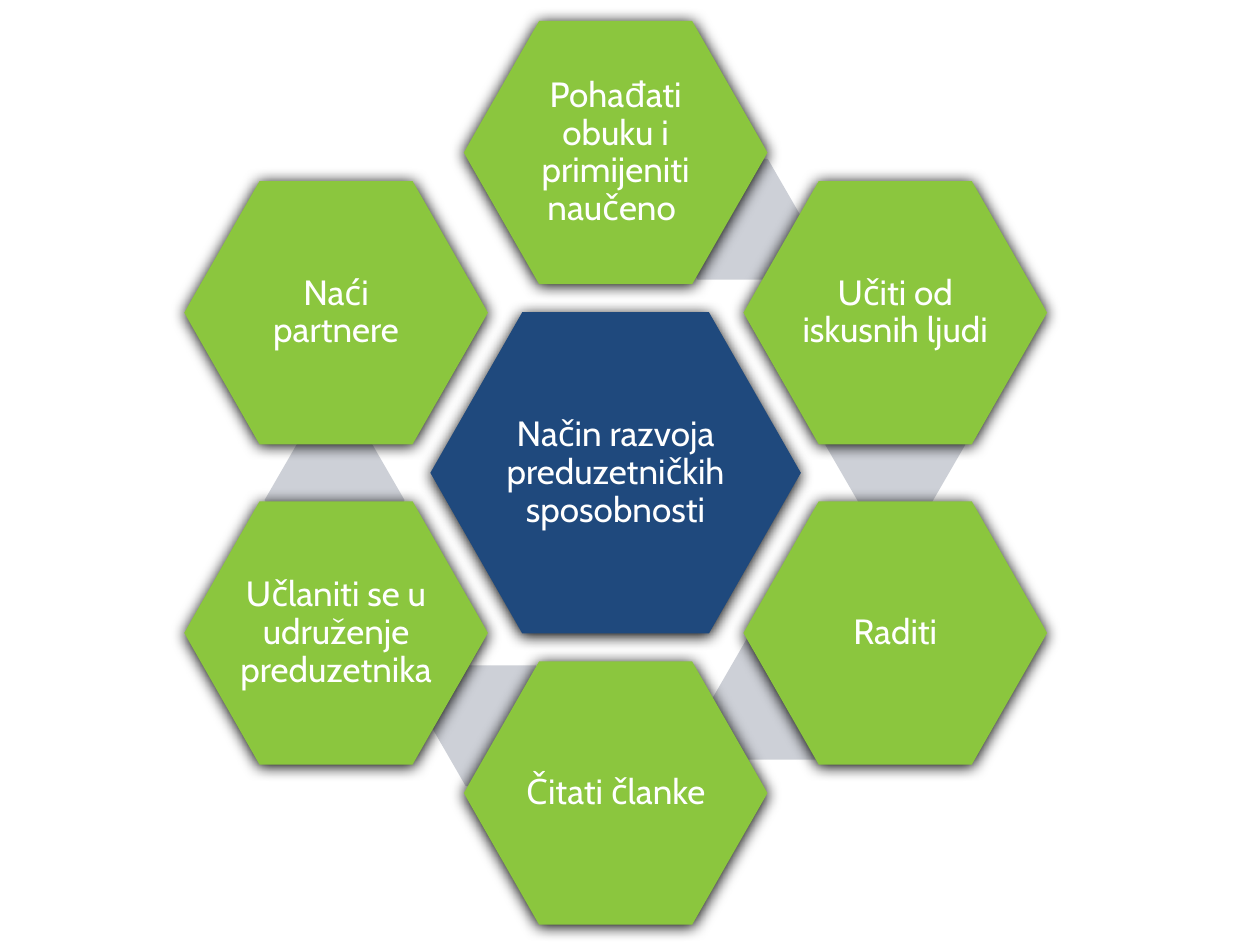
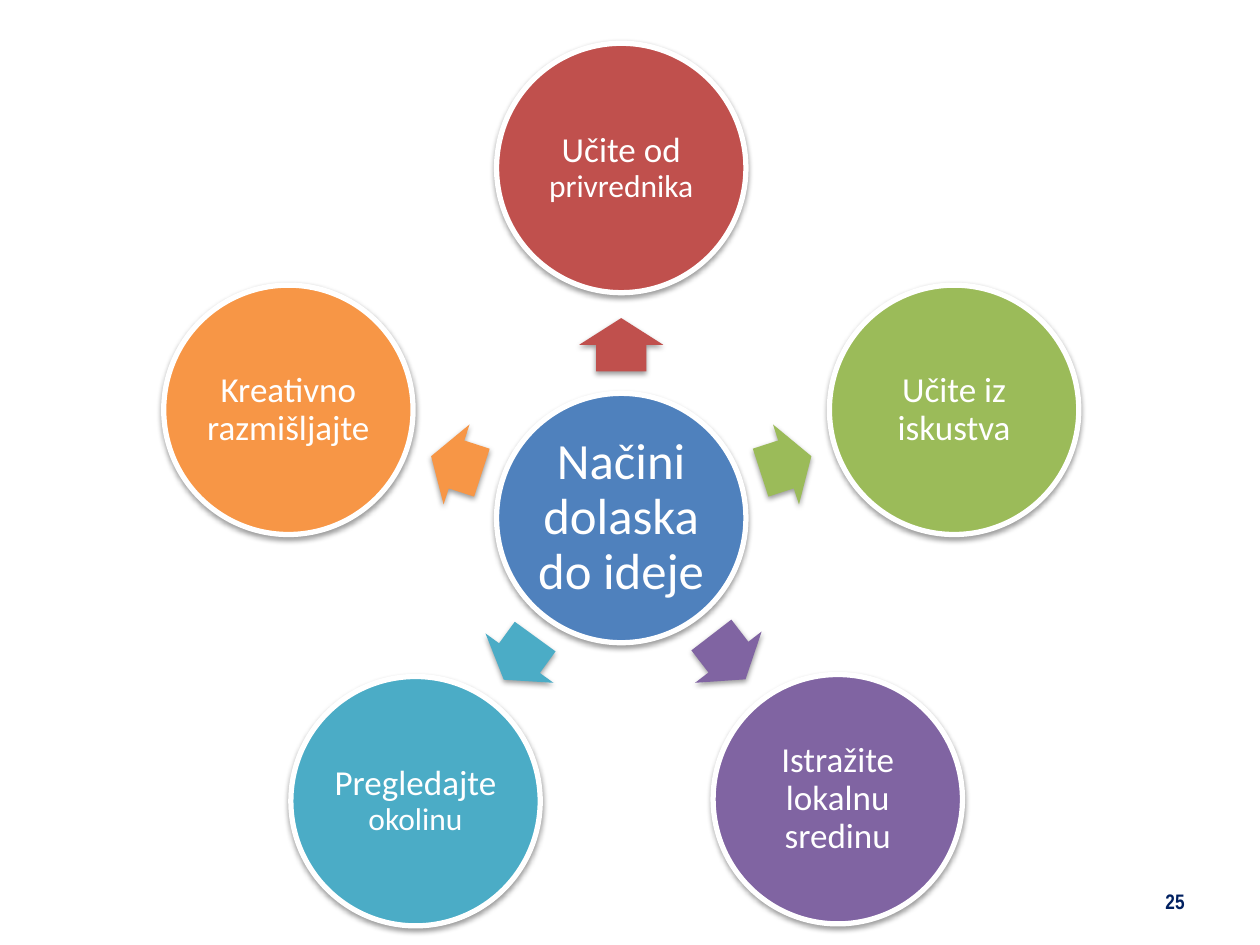
from math import cos, radians, sin

from lxml.etree import SubElement
from pptx import Presentation
from pptx.dml.color import RGBColor
from pptx.enum.shapes import MSO_SHAPE
from pptx.enum.text import MSO_ANCHOR, PP_ALIGN
from pptx.oxml.ns import qn
from pptx.util import Pt

WHITE = "FFFFFF"
NAVY = "1F497D"
GREEN = "8BC63E"
PALE_GREY = "CDD0D7"
BLUE = "4F81BD"
PAGE_NUMBER_COLOUR = "002060"

# Blur, distance and opacity in per cent
STRONG_SHADOW = (8.5, 1, 100)
SOFT_SHADOW = (3.1, 1.6, 38)

HEXAGON_CENTRE = (351.8, 270.2)
HEXAGON_RING = (184.5, 183)
HEXAGON_SIZE = (173.5, 150.5)
HEXAGON_STEPS = [
    # Angle, text and centre of the grey link drawn behind it
    (-90, "Pohađati obuku i primijeniti naučeno ", (418.7, 125.3)),
    (-30, "Učiti od iskusnih ljudi", (511.6, 254.2)),
    (30, "Raditi", (446.8, 399.6)),
    (90, "Čitati članke", (286.2, 414.7)),
    (150, "Učlaniti se u udruženje preduzetnika", (191.2, 285.8)),
    (210, "Naći partnere", None),
]

CIRCLE_CENTRE = (355, 296)
CIRCLE_DIAMETER = 142.5
IDEA_SOURCES = [
    # Angle, distance from the hub, colour and text with sizes
    (-90, 200, "C0504D", [("Učite od ", 20), ("privrednika", 18)]),
    (-18, 200, "9BBB59", [("Učite iz iskustva", 20)]),
    (52.4, 202.8, "8064A2", [("Istražite lokalnu sredinu", 20)]),
    (126, 200, "4BACC6", [("Pregledajte ", 20), ("okolinu", 18)]),
    (198, 200, "F79646", [("Kreativno razmišljajte", 20)]),
]


def colour(hex_string):
    return RGBColor.from_string(hex_string)


def point_on_ring(centre, angle, radius_x, radius_y):
    turn = radians(angle)
    return centre[0] + radius_x * cos(turn), centre[1] + radius_y * sin(turn)


def add_shadow(shape, blur, distance, opacity):
    """Cast a black shadow straight down."""
    effects = shape._element.spPr.find(qn("a:effectLst"))
    outer = SubElement(effects, qn("a:outerShdw"), blurRad=str(Pt(blur)),
                       dist=str(Pt(distance)), dir="5400000", rotWithShape="0")
    black = SubElement(outer, qn("a:srgbClr"), val="000000")
    SubElement(black, qn("a:alpha"), val=str(opacity * 1000))


def add_centred_shape(slide, kind, centre, size, fill, adjustments=(),
                      shadow=None, outline=None, rotation=0):
    width, height = size
    shape = slide.shapes.add_shape(
        kind, Pt(centre[0] - width / 2), Pt(centre[1] - height / 2),
        Pt(width), Pt(height))
    for index, value in enumerate(adjustments):
        shape.adjustments[index] = value
    shape.rotation = rotation
    shape.fill.solid()
    shape.fill.fore_color.rgb = colour(fill)
    if outline:
        shape.line.color.rgb = colour(outline)
        shape.line.width = Pt(3)
    else:
        shape.line.fill.background()
    shape.shadow.inherit = False
    if shadow:
        add_shadow(shape, *shadow)
    return shape


def write_text(shape, runs, font, text_colour=WHITE, bold=False,
               align=PP_ALIGN.CENTER, line_spacing=0.9, margin=2.2):
    """Fill a shape with one paragraph of (text, size) runs."""
    frame = shape.text_frame
    frame.word_wrap = True
    frame.vertical_anchor = MSO_ANCHOR.MIDDLE
    frame.margin_left = frame.margin_right = Pt(margin)
    frame.margin_top = frame.margin_bottom = Pt(margin)
    paragraph = frame.paragraphs[0]
    paragraph.alignment = align
    paragraph.line_spacing = line_spacing
    for text, size in runs:
        run = paragraph.add_run()
        run.text = text
        run.font.name = font
        run.font.size = Pt(size)
        run.font.bold = bold
        run.font.color.rgb = colour(text_colour)


def add_hexagon(slide, centre, size, fill, text):
    hexagon = add_centred_shape(slide, MSO_SHAPE.HEXAGON, centre, size, fill,
                                adjustments=[0.286], shadow=STRONG_SHADOW)
    write_text(hexagon, [(text, 20)], "Cabin")


def add_circle(slide, centre, fill, runs, margin=2.2):
    circle = add_centred_shape(slide, MSO_SHAPE.OVAL, centre,
                               (CIRCLE_DIAMETER, CIRCLE_DIAMETER), fill,
                               shadow=SOFT_SHADOW, outline=WHITE)
    write_text(circle, runs, "Calibri", margin=margin)


def add_outward_arrow(slide, angle, distance, fill):
    """Point an arrow from the hub to the circle at this angle."""
    length = 0.53 * (distance - CIRCLE_DIAMETER)
    middle = 0.495 * distance
    centre = point_on_ring(CIRCLE_CENTRE, angle, middle, middle)
    add_centred_shape(slide, MSO_SHAPE.RIGHT_ARROW, centre, (length, 48), fill,
                      adjustments=[0.6, 0.5], shadow=SOFT_SHADOW,
                      rotation=angle % 360)


def add_page_number(slide, number):
    box = slide.shapes.add_textbox(Pt(624.2), Pt(500.4), Pt(59.8), Pt(28.8))
    write_text(box, [(str(number), 12)], "Arial Narrow", bold=True,
               text_colour=PAGE_NUMBER_COLOUR, align=PP_ALIGN.RIGHT,
               line_spacing=1, margin=7.2)


def build_skills_slide(slide):
    add_hexagon(slide, HEXAGON_CENTRE, (211.7, 183.6), NAVY,
                "Način razvoja preduzetničkih sposobnosti")
    for angle, text, link_centre in HEXAGON_STEPS:
        if link_centre:
            add_centred_shape(slide, MSO_SHAPE.HEXAGON, link_centre, (80, 69),
                              PALE_GREY, adjustments=[0.289])
        centre = point_on_ring(HEXAGON_CENTRE, angle, *HEXAGON_RING)
        add_hexagon(slide, centre, HEXAGON_SIZE, GREEN, text)


def build_ideas_slide(slide):
    add_page_number(slide, 25)
    add_circle(slide, CIRCLE_CENTRE, BLUE, [("Načini dolaska do ideje", 29)],
               margin=2.9)
    for angle, distance, fill, runs in IDEA_SOURCES:
        add_outward_arrow(slide, angle, distance, fill)
        centre = point_on_ring(CIRCLE_CENTRE, angle, distance, distance)
        add_circle(slide, centre, fill, runs)


def main():
    presentation = Presentation()
    presentation.slide_width = Pt(720)
    presentation.slide_height = Pt(540)
    blank = presentation.slide_layouts[6]
    for build in (build_skills_slide, build_ideas_slide):
        build(presentation.slides.add_slide(blank))
    presentation.save("out.pptx")


if __name__ == "__main__":
    main()
